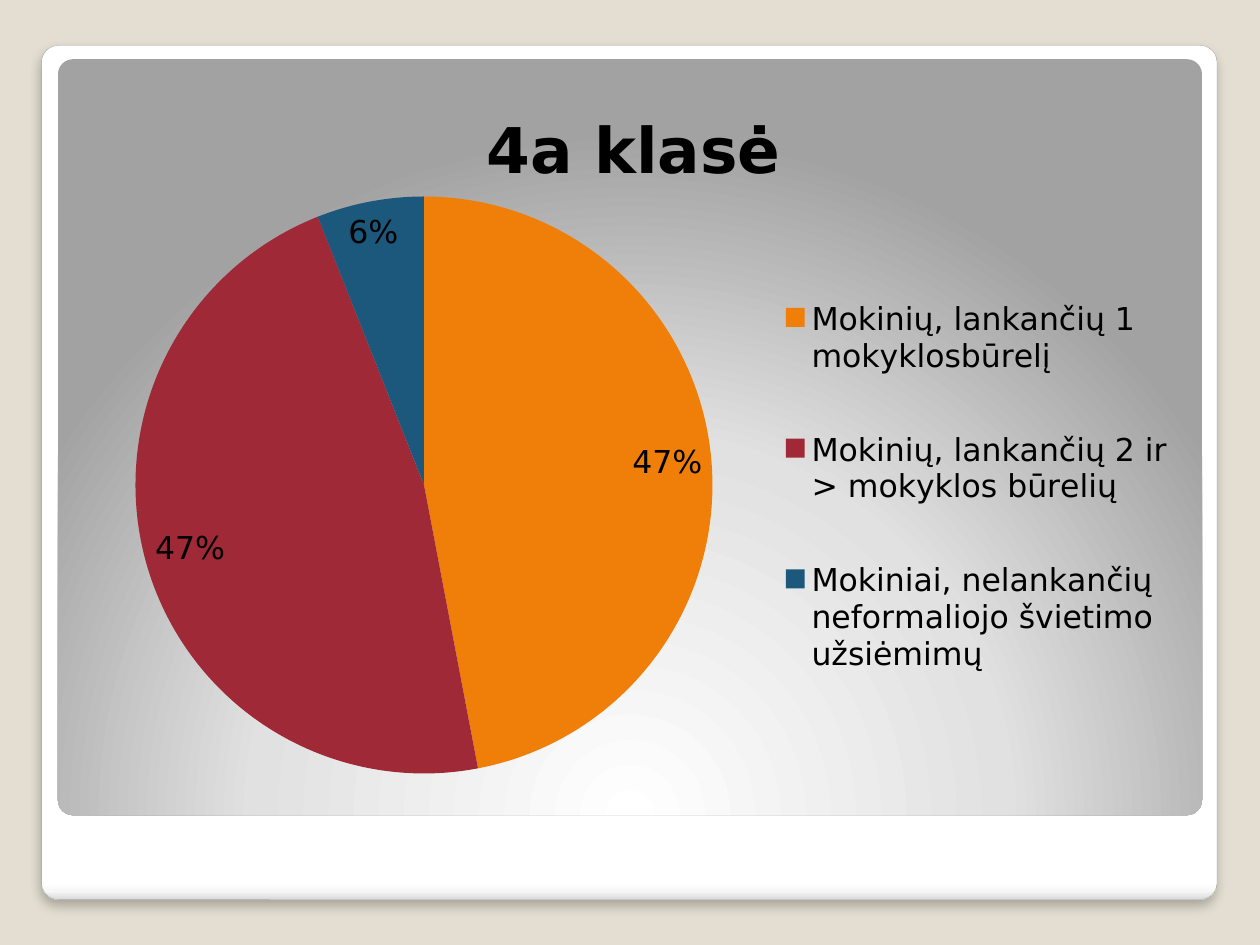
from lxml.etree import SubElement
from pptx import Presentation
from pptx.chart.data import CategoryChartData
from pptx.dml.color import RGBColor
from pptx.enum.chart import XL_CHART_TYPE, XL_LABEL_POSITION, XL_LEGEND_POSITION
from pptx.enum.shapes import MSO_SHAPE
from pptx.oxml import parse_xml
from pptx.oxml.ns import nsdecls, qn
from pptx.util import Inches, Pt

BACKGROUND = RGBColor(0xE3, 0xDE, 0xD1)
EDGE = RGBColor(0xA4, 0xA4, 0xA4)
BLACK = RGBColor(0x00, 0x00, 0x00)
ORANGE = RGBColor(0xF0, 0x7F, 0x09)
RED = RGBColor(0x9F, 0x29, 0x36)
BLUE = RGBColor(0x1B, 0x58, 0x7C)
FONT = "DejaVu Sans"
CHART_WIDTH, CHART_HEIGHT = Inches(8.95), Inches(6.08)


def add_panel(box, stops, direction):
    panel = slide.shapes.add_shape(MSO_SHAPE.ROUNDED_RECTANGLE, *map(Inches, box))
    panel.adjustments[0] = 0.02
    panel.shadow.inherit = False
    panel.line.fill.background()
    stop_xml = "".join(
        f'<a:gs pos="{position * 1000}"><a:srgbClr val="{color}"/></a:gs>'
        for position, color in stops
    )
    panel._element.spPr.find(qn("a:prstGeom")).addnext(parse_xml(
        f'<a:gradFill {nsdecls("a")} rotWithShape="1"><a:gsLst>{stop_xml}</a:gsLst>'
        f"{direction}</a:gradFill>"
    ))
    return panel


def place(element, left, top, size=(), target=None):
    layout = element.find(qn("c:layout"))
    if layout is None:
        layout = parse_xml(f'<c:layout {nsdecls("c")}/>')
        before = [child for child in element if child.tag in (qn("c:legendPos"), qn("c:tx"))]
        if before:
            before[0].addnext(layout)
        else:
            element.insert(0, layout)
    for child in list(layout):
        layout.remove(child)
    manual = SubElement(layout, qn("c:manualLayout"))
    if target:
        SubElement(manual, qn("c:layoutTarget"), val=target)
    for tag in ("xMode", "yMode"):
        SubElement(manual, qn(f"c:{tag}"), val="edge")
    for index, length in enumerate((left, top, *size)):
        whole = CHART_HEIGHT if index % 2 else CHART_WIDTH
        SubElement(manual, qn(f"c:{'xywh'[index]}"), val=str(Inches(length) / whole))


prs = Presentation()
prs.slide_width, prs.slide_height = Inches(10), Inches(7.5)
slide = prs.slides.add_slide(prs.slide_layouts[6])
slide.background.fill.solid()
slide.background.fill.fore_color.rgb = BACKGROUND

frame = add_panel(
    (0.33, 0.36, 9.33, 6.78),
    [(0, "FFFFFF"), (98, "FFFFFF"), (99, "F7F7F7"), (100, "DADADA")],
    '<a:lin ang="5400000" scaled="0"/>',
)
frame.line.color.rgb = EDGE
frame.line.width = Pt(0.16)
shadow = SubElement(
    frame._element.spPr.find(qn("a:effectLst")), qn("a:outerShdw"),
    blurRad=str(Pt(6)), dist=str(Pt(4)), dir="5400000", algn="tl", rotWithShape="0",
)
shadow_color = SubElement(shadow, qn("a:srgbClr"), val=str(BLACK))
SubElement(shadow_color, qn("a:alpha"), val="25000")

add_panel(
    (0.46, 0.47, 9.08, 6),
    [(0, "FFFFFF"), (55, "E1E1E1"), (100, "A2A2A2")],
    '<a:path path="circle">'
    '<a:fillToRect l="50000" t="175000" r="50000" b="-75000"/></a:path>',
)

attendance = CategoryChartData()
attendance.categories = [
    "Mokinių, lankančių 1 mokyklosbūrelį",
    "Mokinių, lankančių 2 ir > mokyklos būrelių",
    "Mokiniai, nelankančių neformaliojo švietimo užsiėmimų",
]
attendance.add_series("Series 1", (47, 47, 6))
chart = slide.shapes.add_chart(
    XL_CHART_TYPE.PIE, Inches(0.55), Inches(0.58), CHART_WIDTH, CHART_HEIGHT, attendance
).chart
chart.font.name = FONT
chart.font.size = Pt(18)
chart.font.color.rgb = BLACK

chart.has_title = True
class_name = chart.chart_title.text_frame.paragraphs[0]
class_name.text = "4a klasė"
class_name.font.name = FONT
class_name.font.size = Pt(36)
class_name.font.bold = True
class_name.font.color.rgb = BLACK
place(chart.chart_title._element, 3.22, 0.18)

chart.has_legend = True
chart.legend.position = XL_LEGEND_POSITION.RIGHT
chart.legend.include_in_layout = False
place(chart.legend._element, 5.68, 1.36, (3.04, 3.86))

pie = chart.plots[0]
pie.vary_by_categories = True
place(chart._chartSpace.chart.plotArea, 0.52, 0.98, (4.59, 4.58), "inner")
for index, color in enumerate((ORANGE, RED, BLUE)):
    wedge = pie.series[0].points[index].format
    wedge.fill.solid()
    wedge.fill.fore_color.rgb = color

pie.has_data_labels = True
shares = pie.data_labels
shares.show_percentage = True
shares.show_value = False
shares.number_format = "0%"
shares.number_format_is_linked = False
shares.position = XL_LABEL_POSITION.BEST_FIT
shares.font.name = FONT
shares.font.size = Pt(18)
shares.font.color.rgb = BLACK

prs.save("out.pptx")
